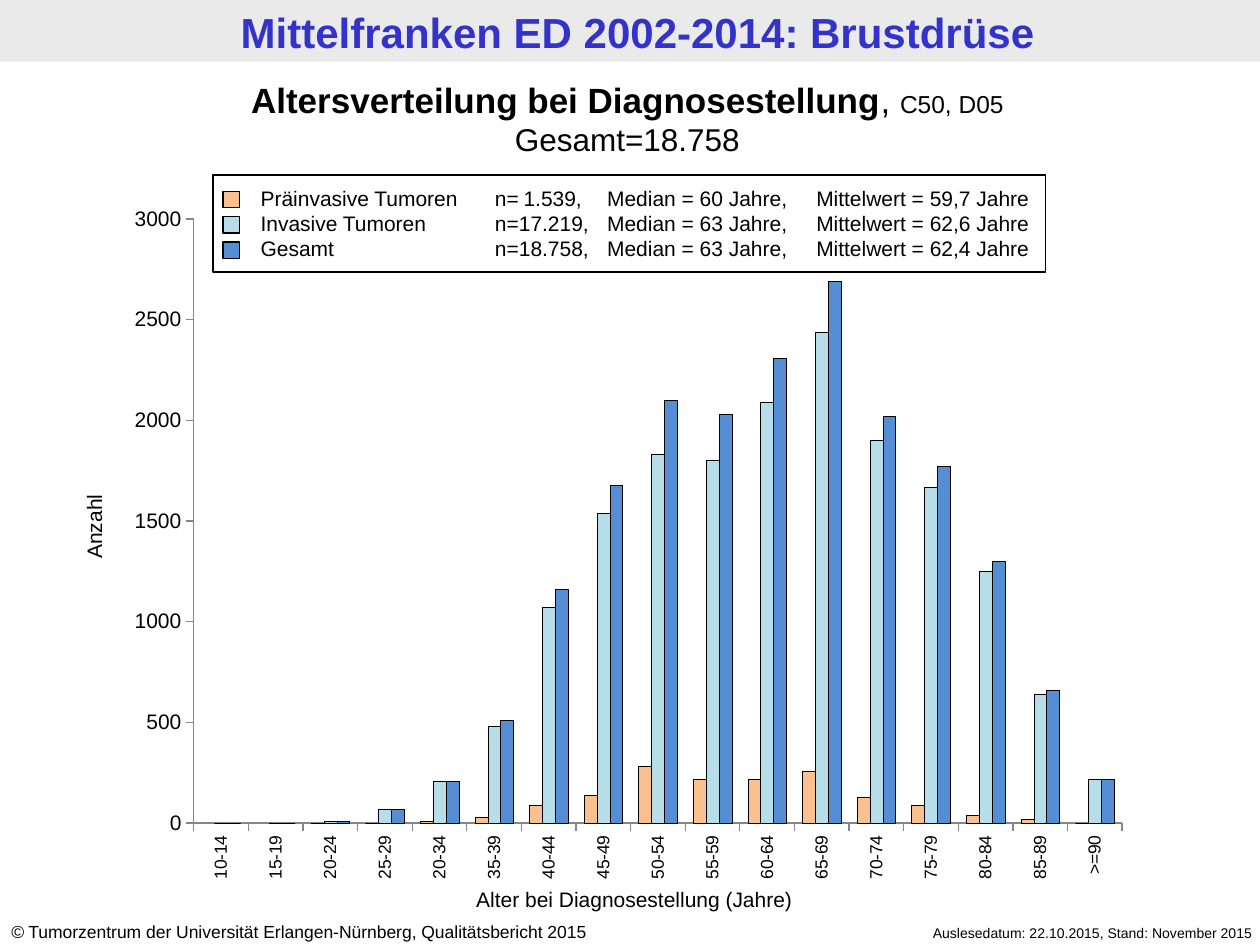
from lxml import etree
from pptx import Presentation
from pptx.chart.data import CategoryChartData
from pptx.dml.color import RGBColor
from pptx.enum import chart as ch, shapes, text
from pptx.oxml import parse_xml
from pptx.oxml.ns import nsdecls, qn
from pptx.util import Inches, Pt

BLACK = RGBColor(0, 0, 0)
WHITE = RGBColor(0xFF, 0xFF, 0xFF)
GRAY = RGBColor(0x86, 0x86, 0x86)
BAND = RGBColor(0xEA, 0xEA, 0xEA)
BLUE = RGBColor(0x33, 0x33, 0xCC)
HUES = [RGBColor(0xFA, 0xC0, 0x90), RGBColor(0xB7, 0xDE, 0xE8), RGBColor(0x55, 0x8E, 0xD5)]
LEFT, MID, RIGHT = text.PP_ALIGN.LEFT, text.PP_ALIGN.CENTER, text.PP_ALIGN.RIGHT

prs = Presentation()
prs.slide_width, prs.slide_height = Inches(10), Inches(7.5)
slide = prs.slides.add_slide(prs.slide_layouts[5])


def add_text(x, y, w, h, lines, size, align=LEFT):
    box = slide.shapes.add_textbox(Inches(x), Inches(y), Inches(w), Inches(h))
    frame = box.text_frame
    frame.word_wrap = True
    frame.auto_size = text.MSO_AUTO_SIZE.SHAPE_TO_FIT_TEXT
    frame.text = "\n".join(lines)
    for par in frame.paragraphs:
        par.alignment = align
        par.font.size, par.font.name = Pt(size), "Arial"
        par.font.color.rgb = BLACK
    return box


def add_rect(x, y, w, h, fill=None, line=None):
    rect = slide.shapes.add_shape(shapes.MSO_SHAPE.RECTANGLE,
                                  Inches(x), Inches(y), Inches(w), Inches(h))
    rect.shadow.inherit = False
    if fill is None:
        rect.fill.background()
    else:
        rect.fill.solid()
        rect.fill.fore_color.rgb = fill
    if line is None:
        rect.line.fill.background()
    else:
        rect.line.color.rgb = line
        rect.line.width = Pt(0.75)
    return rect


# Header band, placed behind the title
band = add_rect(0, 0, 10, 0.49, BAND)
slide.shapes._spTree.insert(2, band._element)
title = slide.shapes.title
title.left, title.top, title.width, title.height = (
    Inches(0.06), Inches(0.01), Inches(10), Inches(0.49))
frame = title.text_frame
frame.text = "Mittelfranken ED 2002-2014: Brustdrüse"
frame.vertical_anchor = text.MSO_ANCHOR.TOP
frame.auto_size = text.MSO_AUTO_SIZE.NONE
frame.margin_top = frame.margin_bottom = Inches(0.04)
par = frame.paragraphs[0]
par.alignment = MID
par.font.size, par.font.name, par.font.bold = Pt(24), "Arial", True
par.font.color.rgb = BLUE

# Footer
add_text(6.65, 7.29, 3.39, 0.24, ["Auslesedatum: 22.10.2015, Stand: November 2015"], 8, RIGHT)
foot = add_text(-0.01, 7.26, 5.24, 0.27, ["©"], 10)
par = foot.text_frame.paragraphs[0]
par.runs[0].font.italic = True
par.add_run().text = " Tumorzentrum der Universität Erlangen-Nürnberg, Qualitätsbericht 2015"

# Heading
head = add_text(-0.04, 0.57, 10.04, 0.74,
                ["Altersverteilung bei Diagnosestellung", "Gesamt=18.758"], 20, MID)
top, total = head.text_frame.paragraphs
top.runs[0].font.bold = True
top.add_run().text = ", "
code = top.add_run()
code.text = "C50, D05"
code.font.size = Pt(14)
total.font.size = Pt(18)

# Chart
data = CategoryChartData()
data.categories = ["10-14", "15-19", "20-24", "25-29", "20-34", "35-39", "40-44", "45-49",
                   "50-54", "55-59", "60-64", "65-69", "70-74", "75-79", "80-84", "85-89", ">=90"]
data.add_series("Präinvasive Tumoren", [None, None, 0, 0, 10, 30, 90, 140, 280, 220, 220,
                                        260, 130, 90, 40, 20, 0])
data.add_series("Invasive Tumoren", [0, 0, 10, 70, 210, 480, 1070, 1540, 1830, 1800, 2090,
                                     2440, 1900, 1670, 1250, 640, 220])
data.add_series("Gesamt", [0, 0, 10, 70, 210, 510, 1160, 1680, 2100, 2030, 2310,
                           2690, 2020, 1770, 1300, 660, 220])
chart = slide.shapes.add_chart(ch.XL_CHART_TYPE.COLUMN_CLUSTERED, Inches(0.91), Inches(1.55),
                               Inches(8.16), Inches(5.55), data).chart
chart.has_legend = chart.has_title = False
chart.font.size, chart.font.name = Pt(18), "Calibri"
chart.font.color.rgb = BLACK
plot = chart.plots[0]
plot.gap_width, plot.overlap, plot.vary_by_categories = 124, 0, False
for ser, hue in zip(plot.series, HUES):
    ser.format.fill.solid()
    ser.format.fill.fore_color.rgb = hue
    ser.format.line.color.rgb = BLACK
    ser.format.line.width = Pt(0.25)

# Axes
for axis, size in ((chart.category_axis, 10), (chart.value_axis, 12)):
    axis.has_major_gridlines = False
    axis.major_tick_mark = ch.XL_TICK_MARK.OUTSIDE
    axis.format.line.color.rgb = GRAY
    font = axis.tick_labels.font
    font.size, font.name = Pt(size), "Arial"
    font.color.rgb = BLACK
chart.value_axis.minimum_scale, chart.value_axis.maximum_scale = 0, 3000
chart.value_axis.major_unit = 500
turn = chart.category_axis._element.find(qn("c:txPr")).find(qn("a:bodyPr"))
turn.set("rot", "-5400000")
turn.set("vert", "horz")

# Plot area: fixed inner place and white fill
area = chart._chartSpace.chart.plotArea
for old in area.findall(qn("c:layout")):
    area.remove(old)
layout = parse_xml(f'<c:layout {nsdecls("c")}><c:manualLayout><c:layoutTarget val="inner"/>'
                   '<c:xMode val="edge"/><c:yMode val="edge"/><c:x val="0.077"/><c:y val="0.034"/>'
                   '<c:w val="0.903"/><c:h val="0.864"/></c:manualLayout></c:layout>')
area.insert(0, layout)
area.append(parse_xml(f'<c:spPr {nsdecls("c", "a")}><a:solidFill>'
                      f'<a:srgbClr val="{WHITE}"/></a:solidFill></c:spPr>'))

# Axis titles
add_text(3.5, 6.99, 3.07, 0.3, ["Alter bei Diagnosestellung (Jahre)"], 12, MID)
add_text(-0.56, 4.03, 2.61, 0.3, ["Anzahl"], 12, MID).rotation = 270

# Key with statistics
key = add_text(1.97, 1.42, 6.42, 0.71, [
    "Präinvasive Tumoren\tn=\t1.539,\tMedian = 60 Jahre,\tMittelwert = 59,7 Jahre",
    "Invasive Tumoren\t\tn=17.219,\tMedian = 63 Jahre,\tMittelwert = 62,6 Jahre",
    "Gesamt\t\tn=18.758,\tMedian = 63 Jahre,\tMittelwert = 62,4 Jahre"], 12)
for par in key.text_frame.paragraphs:
    props = par._p.get_or_add_pPr()
    tabs = etree.Element(qn("a:tabLst"))
    for pos, side in ((1.47, "l"), (1.86, "l"), (2.55, "r"), (2.75, "l"), (4.41, "l")):
        etree.SubElement(tabs, qn("a:tab"), pos=str(Inches(pos)), algn=side)
    props.insert(0, tabs)  # tabs come before the default run properties
add_rect(1.69, 1.39, 6.61, 0.77, line=BLACK)
for row, hue in enumerate(HUES):
    add_rect(1.77, 1.52 + 0.2 * row, 0.13, 0.13, hue, BLACK)

prs.save("out.pptx")
